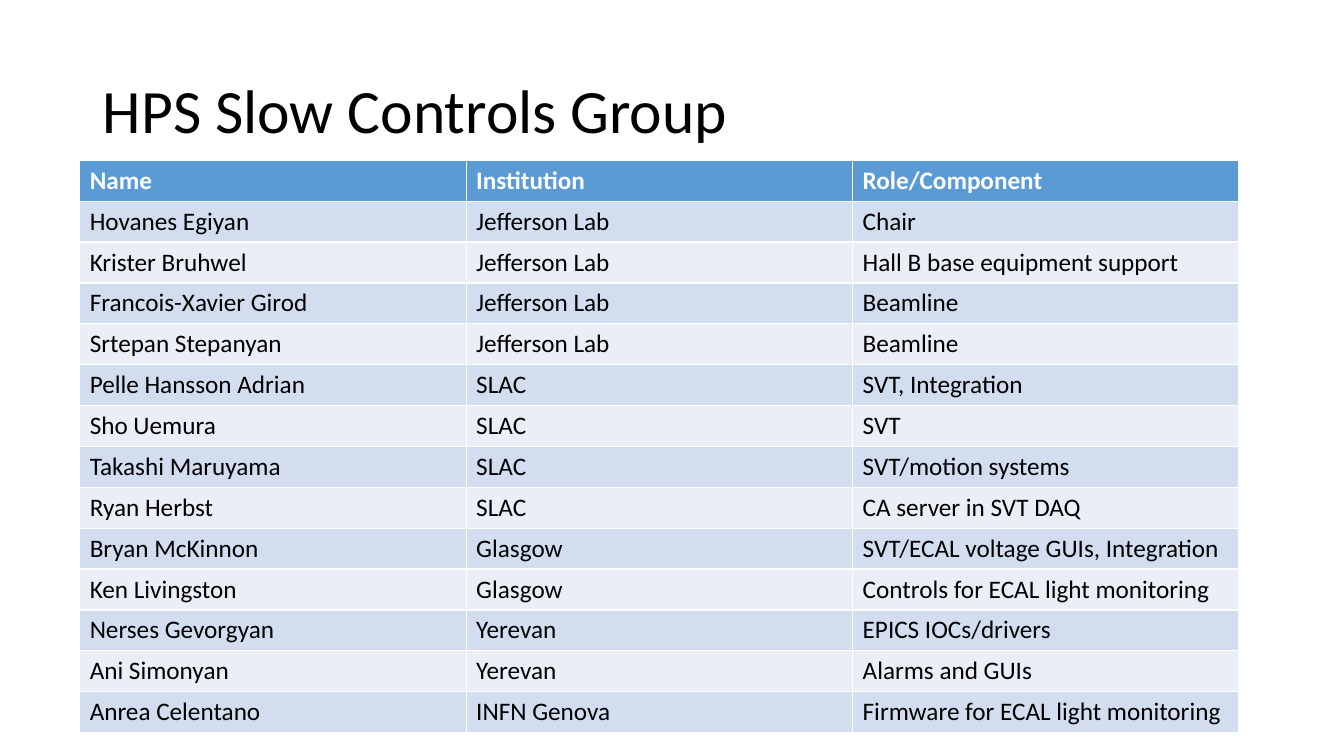
from pptx import Presentation
from pptx import util as u
from pptx.dml.color import RGBColor
from pptx.enum import text

COLOURS = {"header": "5B9BD5", "odd": "D2DEEF", "even": "EAEFF7",
           "white": "FFFFFF", "black": "000000"}
FONT = "Calibri"

MEMBERS = [
    ("Name", "Institution", "Role/Component"),
    ("Hovanes Egiyan", "Jefferson Lab", "Chair"),
    ("Krister Bruhwel", "Jefferson Lab", "Hall B base equipment support"),
    ("Francois-Xavier Girod", "Jefferson Lab", "Beamline"),
    ("Srtepan Stepanyan", "Jefferson Lab", "Beamline"),
    ("Pelle Hansson Adrian", "SLAC", "SVT, Integration"),
    ("Sho Uemura", "SLAC", "SVT"),
    ("Takashi Maruyama", "SLAC", "SVT/motion systems"),
    ("Ryan Herbst", "SLAC", "CA server in SVT DAQ"),
    ("Bryan McKinnon", "Glasgow", "SVT/ECAL voltage GUIs, Integration"),
    ("Ken Livingston", "Glasgow", "Controls for ECAL light monitoring"),
    ("Nerses Gevorgyan", "Yerevan", "EPICS IOCs/drivers"),
    ("Ani Simonyan", "Yerevan", "Alarms and GUIs"),
    ("Anrea Celentano", "INFN Genova", "Firmware for ECAL light monitoring"),
]


def set_font(para, size, colour, bold=False):
    para.font.name = FONT
    para.font.size = u.Pt(size)
    para.font.bold = bold
    para.font.color.rgb = RGBColor.from_string(COLOURS[colour])


deck = Presentation()
deck.slide_width = u.Inches(13.33)
deck.slide_height = u.Inches(7.5)
page = deck.slides.add_slide(deck.slide_layouts[5])

# Title
title = page.shapes.title
title.left, title.top = u.Inches(0.92), u.Inches(0.4)
title.width, title.height = u.Inches(10.76), u.Inches(1.45)
title.text_frame.text = "HPS Slow Controls Group"
title.text_frame.auto_size = text.MSO_AUTO_SIZE.NONE
title.text_frame.vertical_anchor = text.MSO_ANCHOR.MIDDLE
heading = title.text_frame.paragraphs[0]
heading.alignment = text.PP_ALIGN.LEFT
heading.line_spacing = 0.9
set_font(heading, 44, "black")

# Member table: the default style supplies the white rules
frame = page.shapes.add_table(len(MEMBERS), len(MEMBERS[0]), u.Inches(0.79),
                              u.Inches(1.59), u.Inches(11.5), u.Inches(5.6))
table = frame.table
for row_number, member in enumerate(MEMBERS):
    is_header = row_number == 0
    band = "header" if is_header else ("odd" if row_number % 2 else "even")
    table.rows[row_number].height = u.Inches(0.37)
    for column, wording in enumerate(member):
        cell = table.cell(row_number, column)
        cell.text = wording
        cell.fill.solid()
        cell.fill.fore_color.rgb = RGBColor.from_string(COLOURS[band])
        set_font(cell.text_frame.paragraphs[0], 18,
                 "white" if is_header else "black", is_header)
frame.height = u.Inches(5.6)

deck.save("out.pptx")
